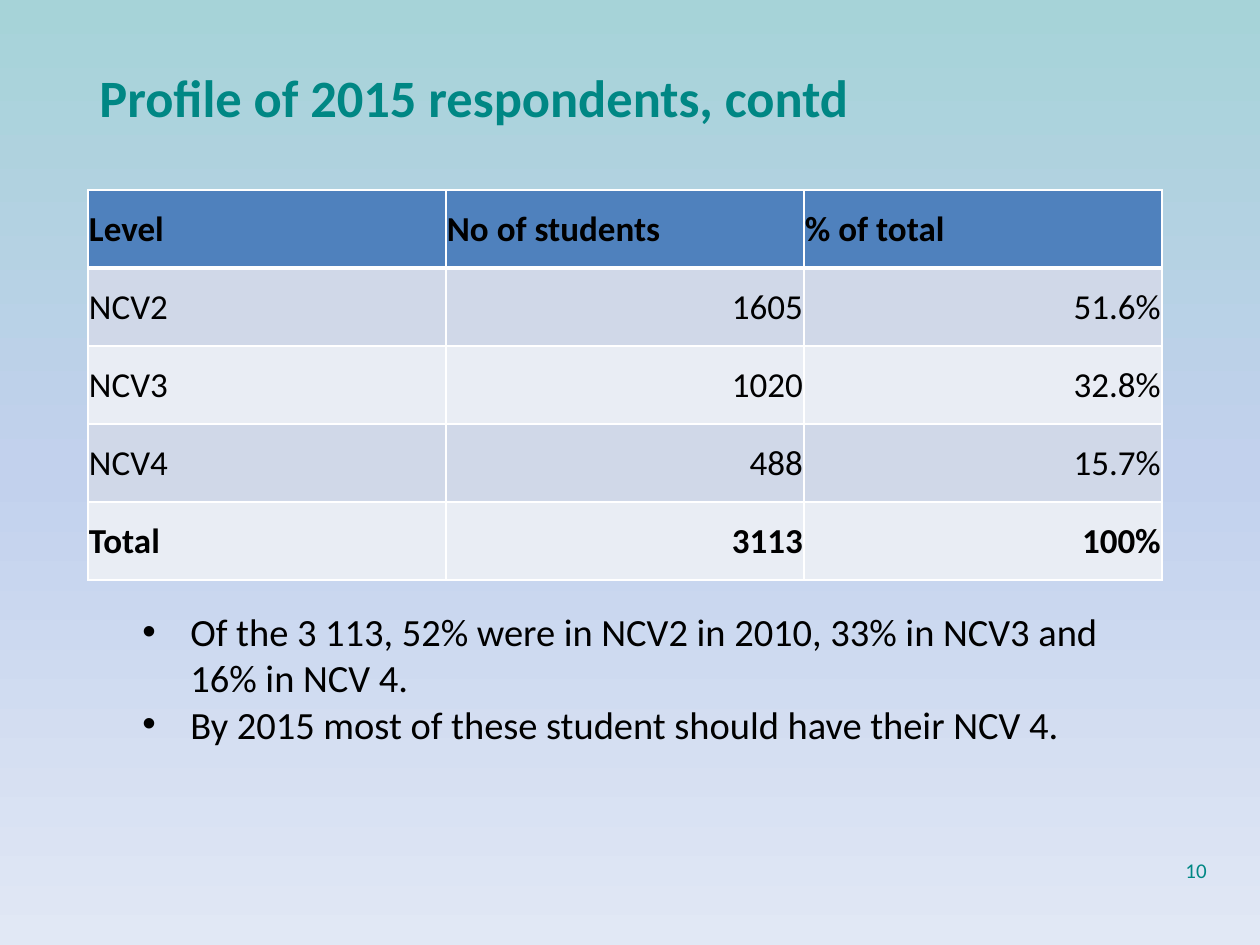
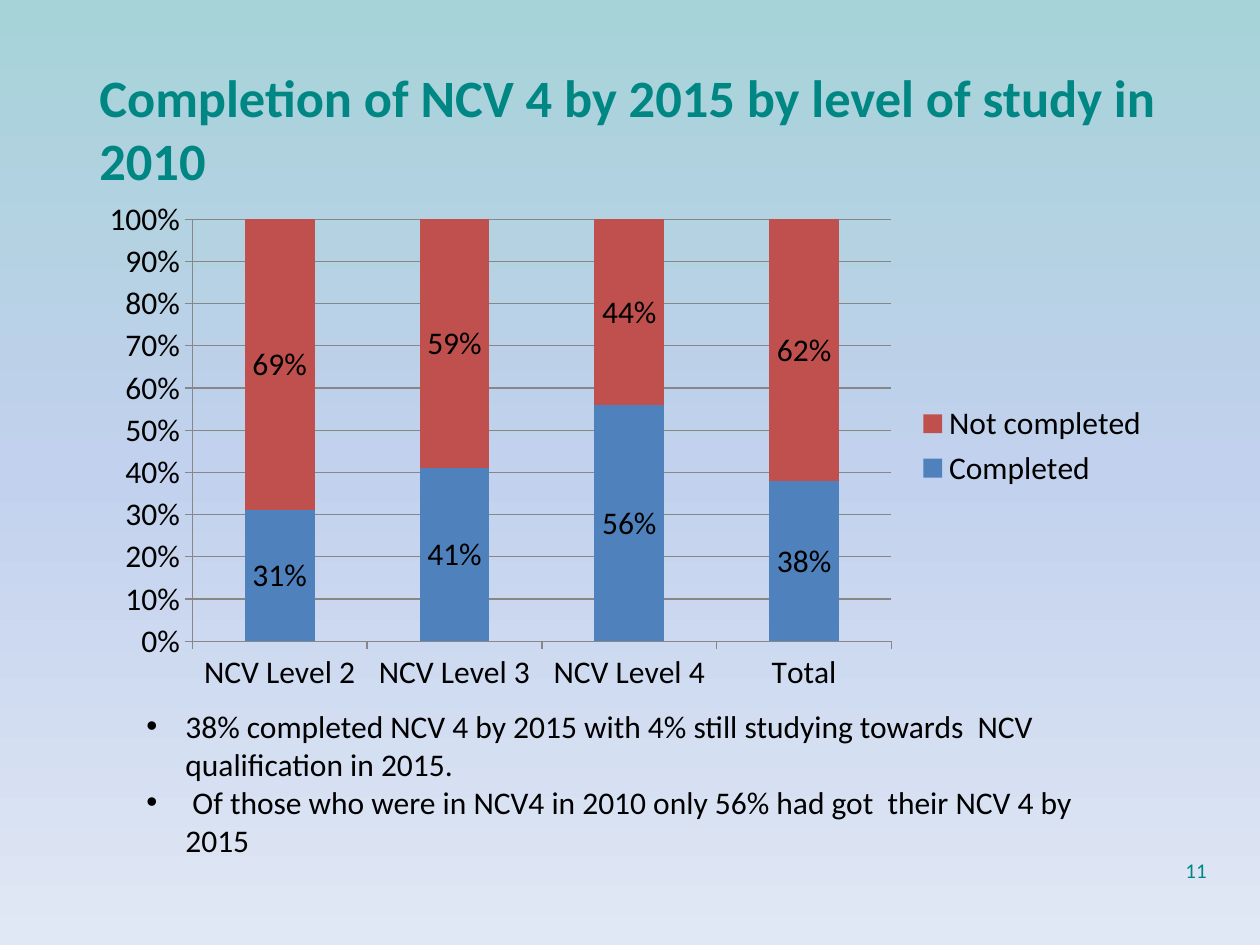
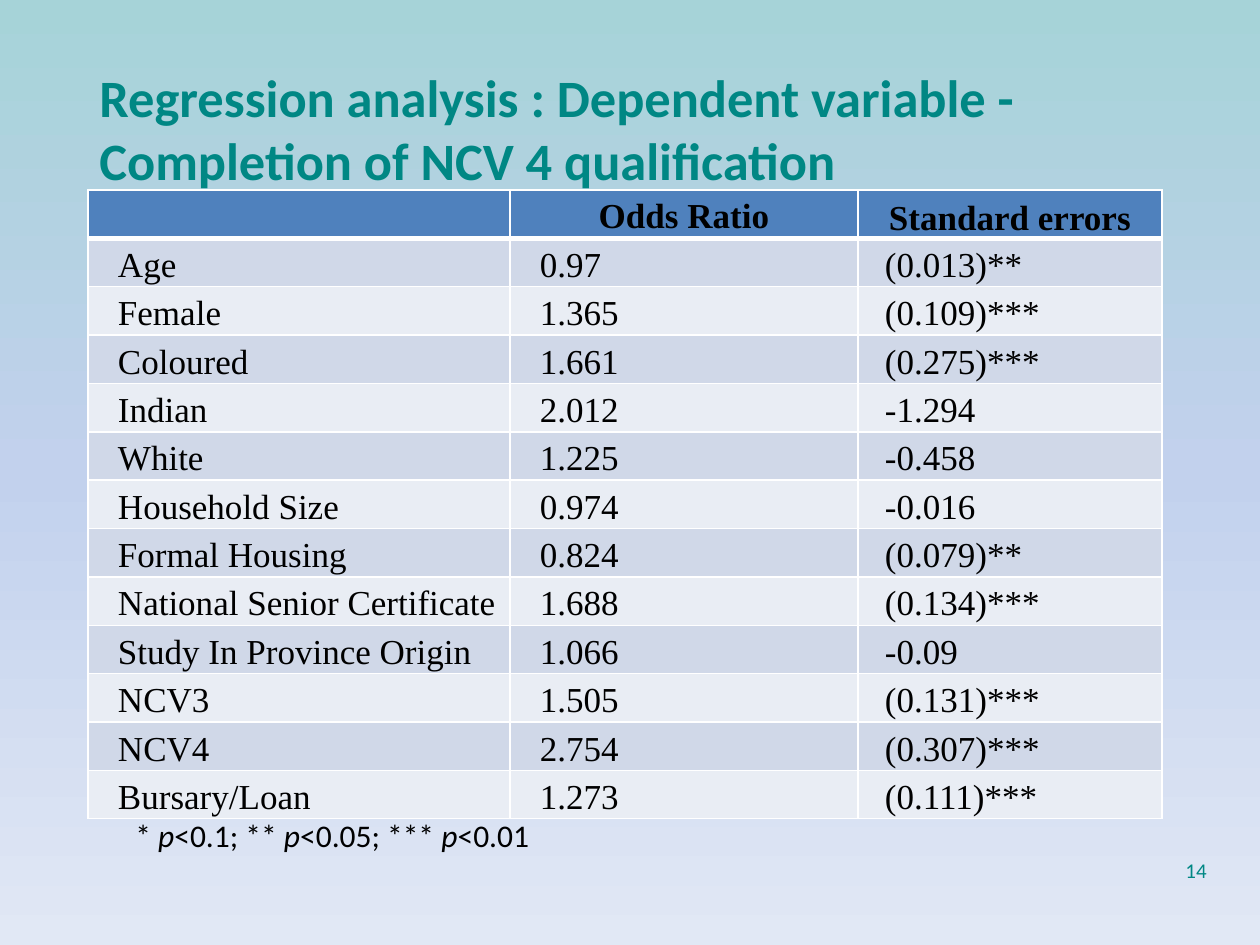
import copy

import pptx
import pptx.chart.data
import pptx.dml.color
import pptx.enum.chart
import pptx.enum.text
import pptx.oxml
import pptx.oxml.ns
import pptx.util

RGB = pptx.dml.color.RGBColor
TEAL = RGB(0x00, 0x87, 0x84)
BLACK = RGB(0x00, 0x00, 0x00)
BLUE = RGB(0x4F, 0x81, 0xBD)
RED = RGB(0xC0, 0x50, 0x4D)
GREY = RGB(0x87, 0x87, 0x87)
DARK = RGB(0xD0, 0xD8, 0xE8)
LIGHT = RGB(0xE9, 0xED, 0xF4)
SKY = [RGB(0xA6, 0xD3, 0xD8), RGB(0xC2, 0xD1, 0xED), RGB(0xE1, 0xE8, 0xF5)]
SANS = "Calibri"
SERIF = "Times New Roman"
PX = 914400 / 126
LEFT, TOP, WIDTH = 88, 190, 1074
ALIGN = pptx.enum.text.PP_ALIGN
ANCHOR = pptx.enum.text.MSO_ANCHOR
NS = pptx.oxml.ns.nsdecls("a")


def px(*nums):
    """Turn px lengths into a list of EMU lengths."""
    return [pptx.util.Emu(round(num * PX)) for num in nums]


def write(frame, lines, size, tint=BLACK, face=SANS, bold=False):
    """Fill a text frame, one paragraph a line; a line is a list of runs."""
    frame.word_wrap = True
    for num, line in enumerate(lines):
        para = frame.add_paragraph() if num else frame.paragraphs[0]
        for part in line:
            run = para.add_run()
            run.text = part
            run.font.size = pptx.util.Pt(size)
            run.font.name = face
            run.font.bold = bold
            run.font.color.rgb = tint


deck = pptx.Presentation()
deck.slide_width, deck.slide_height = px(1260, 945)

# Shared background
fill = deck.slide_master.background.fill
fill.gradient()
fill.gradient_angle = 270
stops = deck.slide_master.element.find(".//" + pptx.oxml.ns.qn("a:gsLst"))
stops.insert(1, copy.deepcopy(stops[0]))
for num, stop in enumerate(fill.gradient_stops):
    stop.position = num / 2
    stop.color.rgb = SKY[num]

# Titles and page numbers
heads = [
    ("Profile of 2015 respondents, contd", 77, "10"),
    ("Completion of NCV 4 by 2015 by level of study in 2010", 140, "11"),
    ("Regression analysis : Dependent variable - Completion of NCV 4 qualification", 140, "14"),
]
slides = []
for title, height, page in heads:
    slide = deck.slides.add_slide(deck.slide_layouts[6])
    slides.append(slide)
    box = slide.shapes.add_textbox(*px(87, 59, 1134, height))
    write(box.text_frame, [[title]], 30, TEAL, bold=True)
    box = slide.shapes.add_textbox(*px(925, 851, 294, 38))
    write(box.text_frame, [[page]], 12, TEAL)
    box.text_frame.vertical_anchor = ANCHOR.MIDDLE
    box.text_frame.paragraphs[0].alignment = ALIGN.RIGHT
first, second, third = slides

# Tables
levels = [
    ("Level", "No of students", "% of total"),
    ("NCV2", "1605", "51.6%"),
    ("NCV3", "1020", "32.8%"),
    ("NCV4", "488", "15.7%"),
    ("Total", "3113", "100%"),
]
odds = [
    ("", "Odds Ratio", "Standard errors"),
    ("Age", "0.97", "(0.013)**"),
    ("Female", "1.365", "(0.109)***"),
    ("Coloured", "1.661", "(0.275)***"),
    ("Indian", "2.012", "-1.294"),
    ("White", "1.225", "-0.458"),
    ("Household Size", "0.974", "-0.016"),
    ("Formal Housing", "0.824", "(0.079)**"),
    ("National Senior Certificate", "1.688", "(0.134)***"),
    ("Study In Province Origin", "1.066", "-0.09"),
    ("NCV3", "1.505", "(0.131)***"),
    ("NCV4", "2.754", "(0.307)***"),
    ("Bursary/Loan", "1.273", "(0.111)***"),
]
grids = [
    (first, levels, (358, 358, 358), 78, SANS, (1, 1, 1, 0)),
    (third, odds, (422, 348, 304), 47, SERIF, (9, 0, 9, 0)),
]
for slide, rows, widths, height, face, pads in grids:
    spot = px(LEFT, TOP, WIDTH, height * len(rows))
    table = slide.shapes.add_table(len(rows), len(widths), *spot).table
    for col, width in zip(table.columns, px(*widths)):
        col.width = width
    for r, row in enumerate(rows):
        table.rows[r].height = px(height)[0]
        for c, word in enumerate(row):
            cell = table.cell(r, c)
            sides = px(*pads)
            cell.margin_left, cell.margin_top, cell.margin_right, cell.margin_bottom = sides
            cell.vertical_anchor = ANCHOR.MIDDLE
            bold = r == 0 or row[0] == "Total"
            if word:
                write(cell.text_frame, [[word]], 20, face=face, bold=bold)
            para = cell.text_frame.paragraphs[0]
            if face == SERIF:
                para.line_spacing = 1.15
                if r == 0:
                    para.alignment = ALIGN.CENTER
                else:
                    dent = px(18 if c == 2 else 21)[0]
                    para._p.get_or_add_pPr().set("indent", str(dent))
            elif r and c:
                para.alignment = ALIGN.RIGHT
            props = cell._tc.get_or_add_tcPr()
            for side in ("L", "R", "T", "B"):
                thick = (r == 0 and side == "B") or (r == 1 and side == "T")
                line = pptx.util.Pt(3 if thick else 1)
                props.append(pptx.oxml.parse_xml(
                    f'<a:ln{side} {NS} w="{line}"><a:solidFill>'
                    f'<a:srgbClr val="FFFFFF"/></a:solidFill></a:ln{side}>'))
            cell.fill.solid()
            cell.fill.fore_color.rgb = BLUE if r == 0 else DARK if r % 2 else LIGHT
    if face == SERIF:
        table.cell(0, 2).vertical_anchor = ANCHOR.BOTTOM

# Completion chart
data = pptx.chart.data.CategoryChartData(number_format="0%")
data.categories = ["NCV Level 2", "NCV Level 3", "NCV Level 4", "Total"]
data.add_series("Completed", (0.31, 0.41, 0.56, 0.38))
data.add_series("Not completed", (0.69, 0.59, 0.44, 0.62))
kind = pptx.enum.chart.XL_CHART_TYPE.COLUMN_STACKED_100
chart = second.shapes.add_chart(kind, *px(LEFT, TOP, WIDTH, 512), data).chart
chart.font.size = pptx.util.Pt(18)
chart.font.name = SANS
chart.font.color.rgb = BLACK
chart.has_title = False
chart.has_legend = True
chart.legend.position = pptx.enum.chart.XL_LEGEND_POSITION.RIGHT
chart.legend.include_in_layout = False
chart.value_axis.has_major_gridlines = True
chart.value_axis.tick_labels.number_format = "0%"
chart.value_axis.tick_labels.number_format_is_linked = False
for part in (chart.category_axis, chart.value_axis, chart.value_axis.major_gridlines):
    part.format.line.color.rgb = GREY
    part.format.line.width = pptx.util.Pt(0.75)
plot = chart.plots[0]
plot.gap_width = 150
plot.overlap = 100
plot.vary_by_categories = False
for bar, tint in zip(plot.series, (BLUE, RED)):
    bar.format.fill.solid()
    bar.format.fill.fore_color.rgb = tint
    bar.data_labels.show_value = True
    bar.data_labels.number_format = "0%"
    bar.data_labels.number_format_is_linked = False

# Bulleted findings
notes = [
    (first, (130, 602, 1032, 152), 22, 48, [
        ["Of the 3 113, 52% were in NCV2 in 2010, 33% in NCV3 and 16% in NCV 4."],
        ["By 2015 most of these student should have their NCV 4."]]),
    (second, (134, 701, 1002, 165), 18, 39, [
        ["38% completed NCV 4 by 2015 with 4% still studying towards  NCV qualification in 2015."],
        [" Of those who were in NCV4 in 2010 only 56% had got  their NCV 4 by  2015"]]),
]
for slide, spot, size, hang, lines in notes:
    frame = slide.shapes.add_textbox(*px(*spot)).text_frame
    write(frame, lines, size)
    for para in frame.paragraphs:
        props = para._p.get_or_add_pPr()
        props.set("marL", str(px(hang)[0]))
        props.set("indent", str(px(-hang)[0]))
        props.append(pptx.oxml.parse_xml(f'<a:buFont {NS} typeface="Arial"/>'))
        props.append(pptx.oxml.parse_xml(f'<a:buChar {NS} char="•"/>'))

# Significance key
frame = third.shapes.add_textbox(*px(123, 810, 630, 50)).text_frame
write(frame, [["* ", "p", "<0.1; ** ", "p", "<0.05; *** ", "p", "<0.01"]], 18)
for run in frame.paragraphs[0].runs:
    run.font.italic = run.text == "p"

deck.save("out.pptx")
